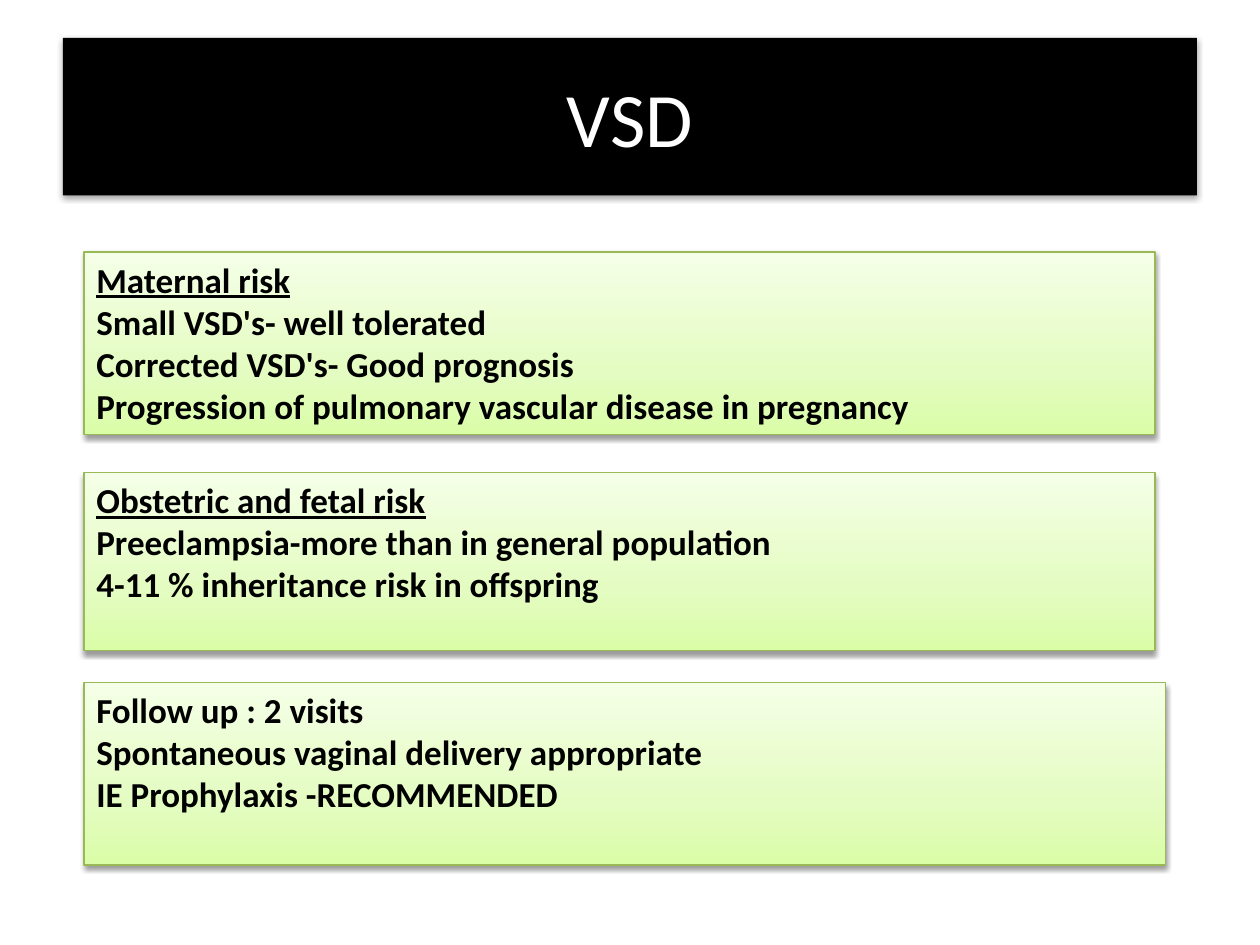
import pptx
import pptx.dml.color
import pptx.enum.shapes
import pptx.enum.text
import pptx.oxml.ns
import pptx.util
from dataclasses import dataclass
from lxml import etree

Pt = pptx.util.Pt
RGB = pptx.dml.color.RGBColor.from_string
qn = pptx.oxml.ns.qn


@dataclass(frozen=True)
class Theme:
    font: str = "Calibri"
    title_size: float = 44
    body_size: float = 20
    title_fill: str = "000000"
    title_text: str = "FFFFFF"
    body_text: str = "000000"
    box_line: str = "98B955"
    # Position in percent and colour, from the bottom edge upwards
    box_stops: tuple = ((0, "DAFDA7"), (35, "E4FCC2"), (100, "F5FFE7"))


THEME = Theme()


def add_color(parent, color, alpha=None):
    clr = etree.SubElement(parent, qn("a:srgbClr"), val=color)
    if alpha is not None:
        etree.SubElement(clr, qn("a:alpha"), val=str(alpha * 1000))


def set_shadow(sp, alpha, distance):
    sp.shadow.inherit = False
    effects = sp._element.spPr.find(qn("a:effectLst"))
    shadow = etree.SubElement(
        effects, qn("a:outerShdw"), blurRad=str(Pt(3.1)), dist=str(Pt(distance)),
        dir=str(90 * 60000), rotWithShape="0")
    add_color(shadow, "000000", alpha)


def set_gradient(sp, stops):
    sp.fill.gradient()
    sp.fill.gradient_angle = 90
    stop_list = sp._element.spPr.find(".//" + qn("a:gsLst"))
    for old in list(stop_list):
        stop_list.remove(old)
    for pos, color in stops:
        stop = etree.SubElement(stop_list, qn("a:gs"), pos=str(pos * 1000))
        add_color(stop, color)


def add_rect(s, left, top, width, height):
    return s.shapes.add_shape(
        pptx.enum.shapes.MSO_SHAPE.RECTANGLE,
        Pt(left), Pt(top), Pt(width), Pt(height))


def set_text(sp, lines, size, color, align, anchor, bold=False):
    tf = sp.text_frame
    tf.word_wrap = True
    tf.vertical_anchor = anchor
    tf.text = "\n".join(lines)
    for p in tf.paragraphs:
        p.alignment = align
        for r in p.runs:
            r.font.name = THEME.font
            r.font.size = Pt(size)
            r.font.bold = bold
            r.font.color.rgb = RGB(color)


def add_title(s, text):
    sp = add_rect(s, 36, 21.6, 648, 90)
    sp.fill.solid()
    sp.fill.fore_color.rgb = RGB(THEME.title_fill)
    sp.line.fill.background()
    set_shadow(sp, 35, 1.8)
    set_text(sp, [text], THEME.title_size, THEME.title_text,
             pptx.enum.text.PP_ALIGN.CENTER, pptx.enum.text.MSO_ANCHOR.MIDDLE)


def add_box(s, top, width, height, lines, heading):
    sp = add_rect(s, 48, top, width, height)
    set_gradient(sp, THEME.box_stops)
    sp.line.color.rgb = RGB(THEME.box_line)
    sp.line.width = Pt(0.75)
    set_shadow(sp, 38, 1.6)
    set_text(sp, lines, THEME.body_size, THEME.body_text,
             pptx.enum.text.PP_ALIGN.LEFT, pptx.enum.text.MSO_ANCHOR.TOP, bold=True)
    if heading:
        sp.text_frame.paragraphs[0].runs[0].font.underline = True


def main():
    prs = pptx.Presentation()
    prs.slide_width, prs.slide_height = Pt(720), Pt(540)
    s = prs.slides.add_slide(prs.slide_layouts[6])

    # Title band
    add_title(s, "VSD")

    # Risk and follow-up boxes: top, width, height, lines, underlined heading
    boxes = [
        (144, 612, 104.4,
         ["Maternal risk", "Small VSD's- well tolerated",
          "Corrected VSD's- Good prognosis",
          "Progression of pulmonary vascular disease in pregnancy"], True),
        (270, 612, 101.7,
         ["Obstetric and fetal risk",
          "Preeclampsia-more than in general population",
          "4-11 % inheritance risk in offspring"], True),
        (390, 618, 104.4,
         ["Follow up : 2 visits", "Spontaneous vaginal delivery appropriate",
          "IE Prophylaxis -RECOMMENDED"], False),
    ]
    for box in boxes:
        add_box(s, *box)

    prs.save("out.pptx")


if __name__ == "__main__":
    main()
